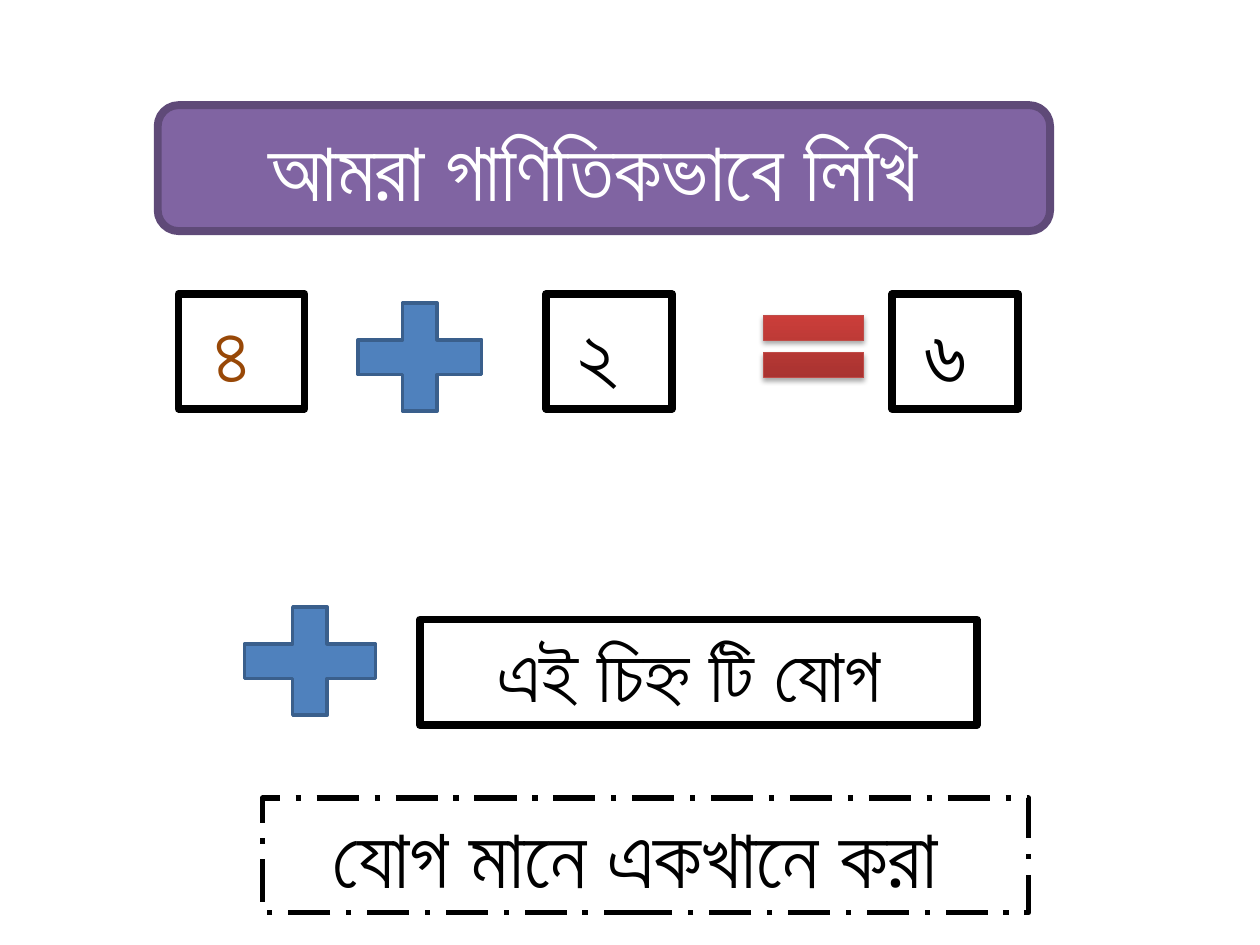
from lxml.etree import SubElement
from pptx import Presentation
from pptx.dml.color import RGBColor
from pptx.enum.dml import MSO_LINE
from pptx.enum.shapes import MSO_SHAPE
from pptx.enum.text import MSO_ANCHOR, MSO_AUTO_SIZE, PP_ALIGN
from pptx.oxml.ns import qn
from pptx.util import Cm, Pt

BLACK, WHITE = "000000", "FFFFFF"
BLUE, BLUE_EDGE = "4F81BD", "3A5F8C"


def color(value):
    return RGBColor.from_string(value)


def add_shape(s, kind, x, y, w, h, edge, weight, fill=None):
    sp = s.shapes.add_shape(kind, Cm(x), Cm(y), Cm(w), Cm(h))
    sp.shadow.inherit = False
    if fill:
        sp.fill.solid()
        sp.fill.fore_color.rgb = color(fill)
    else:
        sp.fill.background()
    sp.line.color.rgb = color(edge)
    sp.line.width = Pt(weight)
    return sp


def set_text(sp, text, size, font, ink=BLACK, anchor=MSO_ANCHOR.TOP):
    tf = sp.text_frame
    tf.word_wrap = True
    tf.vertical_anchor = anchor
    p = tf.paragraphs[0]
    p.text = text
    p.alignment = PP_ALIGN.CENTER
    p.font.size = Pt(size)
    p.font.name = font
    p.font.color.rgb = color(ink)


def add_text_box(s, x, y, w, h, text, size=48, font="Roboto", ink=BLACK, weight=4.5):
    sp = add_shape(s, MSO_SHAPE.RECTANGLE, x, y, w, h, BLACK, weight)
    set_text(sp, text, size, font, ink)
    sp.text_frame.auto_size = MSO_AUTO_SIZE.SHAPE_TO_FIT_TEXT
    return sp


def add_plus(s, x, y, w):
    add_shape(s, MSO_SHAPE.MATH_PLUS, x, y, w, 2.96, BLUE_EDGE, 2, BLUE)


def add_equal(s, x, y, w, h):
    sp = add_shape(s, MSO_SHAPE.MATH_EQUAL, x, y, w, h, "BF4C48", 0.75)

    # Red gradient, dark at the bottom
    sp.fill.gradient()
    sp.fill.gradient_angle = 90
    stops = sp._element.spPr.find(".//" + qn("a:gsLst"))
    for stop in list(stops):
        stops.remove(stop)
    for percent, value in ((0, "9C2F2D"), (80, "CB3E3A"), (100, "CE3B37")):
        stop = SubElement(stops, qn("a:gs"), pos=str(percent * 1000))
        SubElement(stop, qn("a:srgbClr"), val=value)

    # Soft shadow below
    effects = sp._element.spPr.find(qn("a:effectLst"))
    shadow = SubElement(effects, qn("a:outerShdw"), blurRad=str(Pt(3.1)),
                        dist=str(Pt(1.8)), dir="5400000", rotWithShape="0")
    ink = SubElement(shadow, qn("a:srgbClr"), val=BLACK)
    SubElement(ink, qn("a:alpha"), val="35000")


def main():
    prs = Presentation()
    prs.slide_width, prs.slide_height = Cm(25.4), Cm(19.05)
    s = prs.slides.add_slide(prs.slide_layouts[6])

    # Sum: 4 + 2 = 6
    add_plus(s, 6.77, 5.72, 3.39)
    add_equal(s, 15.03, 5.93, 2.75, 2.12)
    for x, digit, font, ink in ((3.6, "৪ ", "Roboto", "984807"),
                                (11.01, "২ ", "Calibri", BLACK),
                                (17.99, "৬ ", "Calibri", BLACK)):
        add_text_box(s, x, 5.93, 2.54, 2.31, digit, font=font, ink=ink)

    # Meaning of the plus sign
    add_plus(s, 4.45, 11.85, 3.6)
    add_text_box(s, 8.47, 12.49, 11.22, 2.13, "এই চিহ্ন টি যোগ ", size=44)
    meaning = add_text_box(s, 5.29, 16.09, 15.45, 2.31, "যোগ মানে একখানে করা ", weight=3)
    meaning.line.dash_style = MSO_LINE.LONG_DASH_DOT

    # Title banner
    banner = add_shape(s, MSO_SHAPE.ROUNDED_RECTANGLE, 3.18, 2.12, 17.99, 2.54,
                       "5F4A78", 4.5, "8064A2")
    set_text(banner, "আমরা গাণিতিকভাবে লিখি ", 48, "Roboto", WHITE, MSO_ANCHOR.MIDDLE)

    prs.save("out.pptx")


if __name__ == "__main__":
    main()
